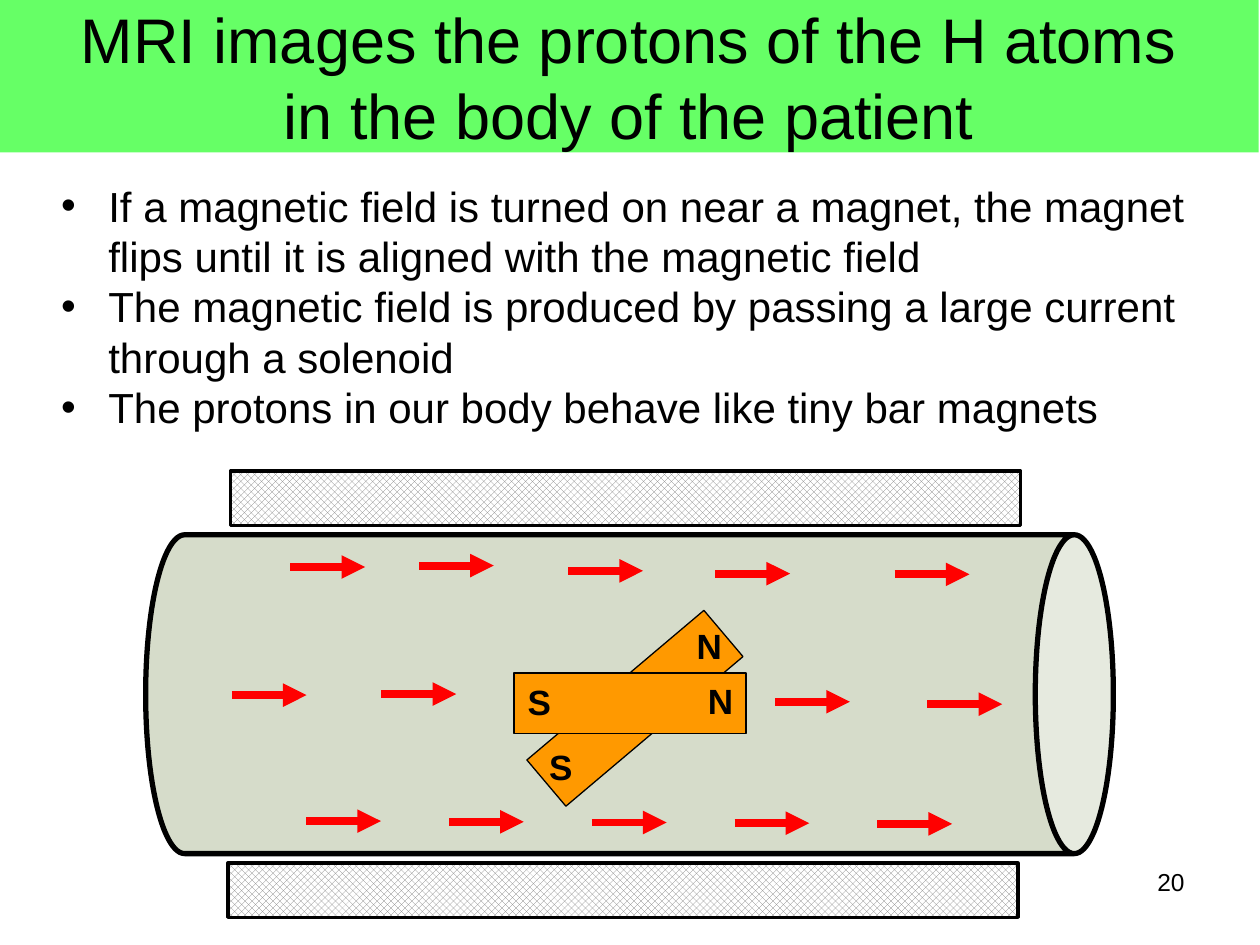
from dataclasses import dataclass

from lxml.etree import SubElement
from pptx import Presentation
from pptx.dml.color import RGBColor
from pptx.enum.dml import MSO_PATTERN_TYPE as Pattern
from pptx.enum.shapes import MSO_CONNECTOR_TYPE as Connector, MSO_SHAPE as Shape
from pptx.enum.text import MSO_ANCHOR as Anchor, PP_ALIGN as Align
from pptx.oxml.ns import qn
from pptx.util import Pt

FONT = "Arial"
BLACK = "000000"
LINE_HEIGHT = 1.2
BULLET_INDENT = 27
ARROW_LENGTH = 42.7


@dataclass(frozen=True)
class Box:
    left: float
    top: float
    width: float
    height: float

    def lengths(self):
        return [Pt(value) for value in (self.left, self.top, self.width, self.height)]


@dataclass(frozen=True)
class Label:
    text: str
    left: float
    top: float


@dataclass(frozen=True)
class Magnet:
    bar: Box
    rotation: float
    poles: tuple[Label, ...]


TITLE = ("MRI images the protons of the H atoms", "in the body of the patient")
BULLETS = (
    ("If a magnetic field is turned on near a magnet, the magnet",
     "flips until it is aligned with the magnetic field"),
    ("The magnetic field is produced by passing a large current",
     "through a solenoid"),
    ("The protons in our body behave like tiny bar magnets",),
)
CYLINDER = Box(268.6, 120.2, 182.2, 553)
COILS = (Box(131.8, 269.3, 451.4, 31), Box(130.3, 493.2, 451.4, 31))
MAGNETS = (
    Magnet(Box(296.6, 387.4, 132.5, 34.6), 319.8,
           (Label("N", 391, 353.5), Label("S", 306.7, 422.6))),
    Magnet(Box(293.8, 384.5, 132.5, 34.6), 0,
           (Label("N", 397.4, 384.5), Label("S", 294.5, 385.2))),
)
TOP_ARROWS = [(166, 324), (239.5, 323.2), (324.8, 326.2), (408.8, 327.8), (511.3, 328.2)]
MIDDLE_ARROWS = [(132.5, 397.2), (218, 396.6), (443, 401), (530, 402.4)]
BOTTOM_ARROWS = [(175 + 81.6 * i, 469.2 + 0.4 * i) for i in range(5)]


def color(hex_code: str) -> RGBColor:
    return RGBColor.from_string(hex_code)


def draw_shape(shapes, kind, box: Box, fill: str | None, line_width: float = 0):
    """Without a fill colour the shape gets the coil pattern."""
    shape = shapes.add_shape(kind, *box.lengths())
    shape.shadow.inherit = False
    if fill:
        shape.fill.solid()
        shape.fill.fore_color.rgb = color(fill)
    else:
        shape.fill.patterned()
        shape.fill.pattern = Pattern.LARGE_CHECKER_BOARD
        shape.fill.fore_color.rgb = color("808080")
        shape.fill.back_color.rgb = color("FFFFFF")
    if line_width:
        shape.line.color.rgb = color(BLACK)
        shape.line.width = Pt(line_width)
    else:
        shape.line.fill.background()
    return shape


def write_lines(paragraph, lines: tuple[str, ...], size: float,
                align=Align.LEFT, bold: bool = False) -> None:
    paragraph.alignment = align
    paragraph.line_spacing = Pt(LINE_HEIGHT * size)
    for index, line in enumerate(lines):
        if index:
            paragraph.add_line_break()
        run = paragraph.add_run()
        run.text = line
        run.font.name = FONT
        run.font.size = Pt(size)
        run.font.bold = bold
        run.font.color.rgb = color(BLACK)


def add_bullet(paragraph) -> None:
    properties = paragraph._p.get_or_add_pPr()
    properties.set("marL", str(Pt(BULLET_INDENT)))
    properties.set("indent", str(Pt(-BULLET_INDENT)))
    SubElement(properties, qn("a:buFont")).set("typeface", FONT)
    SubElement(properties, qn("a:buChar")).set("char", "•")


def draw_text_box(shapes, box: Box, wrap: bool):
    frame = shapes.add_textbox(*box.lengths()).text_frame
    frame.word_wrap = wrap
    return frame


def draw_title(shapes) -> None:
    band = draw_shape(shapes, Shape.RECTANGLE, Box(-0.7, 0, 720, 87.1), "66FF66")
    band.text_frame.word_wrap = True
    band.text_frame.vertical_anchor = Anchor.MIDDLE
    write_lines(band.text_frame.paragraphs[0], TITLE, 36, Align.CENTER)


def draw_bullets(shapes) -> None:
    frame = draw_text_box(shapes, Box(27.8, 99.4, 663, 152.6), wrap=False)
    for index, lines in enumerate(BULLETS):
        paragraph = frame.add_paragraph() if index else frame.paragraphs[0]
        write_lines(paragraph, lines, 24)
        add_bullet(paragraph)


def draw_solenoid(shapes) -> None:
    cylinder = draw_shape(shapes, Shape.CAN, CYLINDER, "D6DCCA", 3)
    cylinder.rotation = 90
    cylinder.adjustments[0] = 0.245
    for coil in COILS:
        draw_shape(shapes, Shape.RECTANGLE, coil, None, 2)


def draw_magnet(shapes, magnet: Magnet) -> None:
    bar = draw_shape(shapes, Shape.RECTANGLE, magnet.bar, "FF9900", 0.75)
    bar.rotation = magnet.rotation
    for pole in magnet.poles:
        frame = draw_text_box(shapes, Box(pole.left, pole.top, 28.8, 31), wrap=False)
        write_lines(frame.paragraphs[0], (pole.text,), 20, bold=True)


def draw_arrow(shapes, left: float, top: float) -> None:
    arrow = shapes.add_connector(Connector.STRAIGHT, Pt(left), Pt(top),
                                 Pt(left + ARROW_LENGTH), Pt(top))
    arrow.line.color.rgb = color("FF0000")
    arrow.line.width = Pt(4.5)
    SubElement(arrow.line._get_or_add_ln(), qn("a:tailEnd")).set("type", "triangle")
    SubElement(arrow._element.spPr, qn("a:effectLst"))


def main() -> None:
    presentation = Presentation()
    presentation.slide_width, presentation.slide_height = Pt(720), Pt(540)
    slide = presentation.slides.add_slide(presentation.slide_layouts[6])
    shapes = slide.shapes

    draw_solenoid(shapes.add_group_shape().shapes)
    draw_title(shapes)
    for magnet in MAGNETS:
        draw_magnet(shapes.add_group_shape().shapes, magnet)
    page_number = draw_text_box(shapes, Box(516.2, 491.8, 167.8, 37.4), wrap=True)
    write_lines(page_number.paragraphs[0], ("20",), 14, Align.RIGHT)
    draw_bullets(shapes)
    field = shapes.add_group_shape().shapes
    for left, top in TOP_ARROWS + MIDDLE_ARROWS + BOTTOM_ARROWS:
        draw_arrow(field, left, top)

    presentation.save("out.pptx")


if __name__ == "__main__":
    main()
